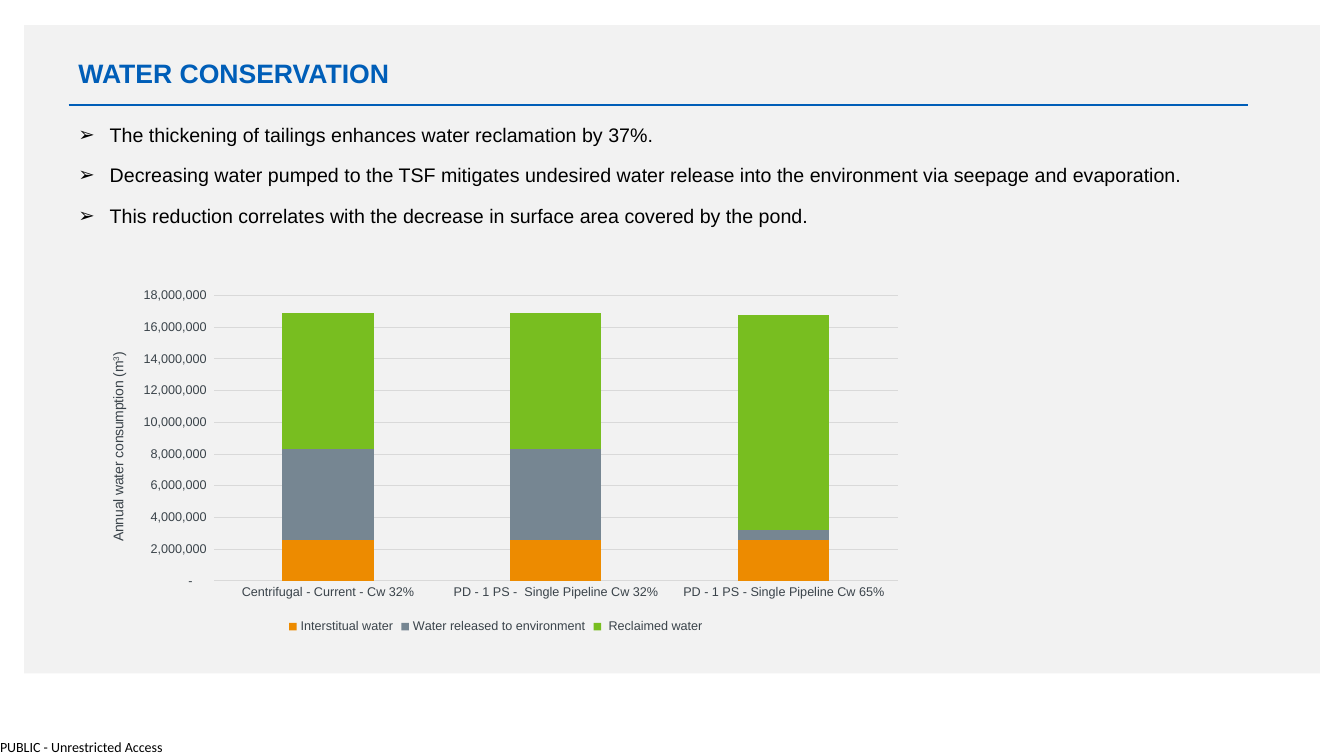
import pptx
import pptx.chart.data
import pptx.dml.color
import pptx.enum.chart
import pptx.enum.shapes
import pptx.enum.text
import pptx.oxml
import pptx.oxml.ns
import pptx.util
from lxml import etree

RGBColor = pptx.dml.color.RGBColor
Inches = pptx.util.Inches
Pt = pptx.util.Pt
qn = pptx.oxml.ns.qn

BLUE = RGBColor(0x00, 0x5E, 0xB8)
BLACK = RGBColor(0x00, 0x00, 0x00)
PANEL_GRAY = RGBColor(0xF2, 0xF2, 0xF2)
GRID_GRAY = RGBColor(0xD9, 0xD9, 0xD9)
AXIS_TEXT = RGBColor(0x3A, 0x43, 0x4A)
ORANGE = RGBColor(0xED, 0x8B, 0x00)
SLATE = RGBColor(0x76, 0x86, 0x92)
GREEN = RGBColor(0x78, 0xBE, 0x20)

BULLETS = [
    "The thickening of tailings enhances water reclamation by 37%.",
    "Decreasing water pumped to the TSF mitigates undesired water release "
    "into the environment via seepage and evaporation.",
    "This reduction correlates with the decrease in surface area covered by the pond.",
]
SCENARIOS = [
    "Centrifugal - Current - Cw 32%",
    "PD - 1 PS -  Single Pipeline Cw 32%",
    "PD - 1 PS - Single Pipeline Cw 65%",
]
WATER_SERIES = [
    ("Interstitual water", ORANGE, (2600000, 2600000, 2600000)),
    ("Water released to environment", SLATE, (5700000, 5700000, 600000)),
    (" Reclaimed water ", GREEN, (8600000, 8600000, 13600000)),
]
NUMBER_FORMAT = '_ * #,##0_ ;_ * \\-#,##0_ ;_ * "-"??_ ;_ '


def set_font(font, size, color, name="Arial", bold=False):
    font.size = Pt(size)
    font.name = name
    font.bold = bold
    font.color.rgb = color


def add_text_frame(slide, box):
    frame = slide.shapes.add_textbox(*map(Inches, box)).text_frame
    frame.word_wrap = True
    return frame


def add_panel(slide, box):
    panel = slide.shapes.add_shape(
        pptx.enum.shapes.MSO_SHAPE.RECTANGLE, *map(Inches, box))
    panel.shadow.inherit = False
    panel.fill.solid()
    panel.fill.fore_color.rgb = PANEL_GRAY
    panel.line.fill.background()


def add_heading(slide, box, rule_width, rule_gap):
    left, top, width, height = box
    frame = add_text_frame(slide, box)
    frame.vertical_anchor = pptx.enum.text.MSO_ANCHOR.MIDDLE
    paragraph = frame.paragraphs[0]
    paragraph.text = "WATER CONSERVATION"
    paragraph.line_spacing = 0.75
    set_font(paragraph.font, 19, BLUE, bold=True)

    # Rule under the heading
    rule_top = Inches(top + height + rule_gap)
    rule = slide.shapes.add_connector(
        pptx.enum.shapes.MSO_CONNECTOR.STRAIGHT,
        Inches(left), rule_top, Inches(left + rule_width), rule_top)
    rule.line.color.rgb = BLUE
    rule.line.width = Pt(1)
    etree.SubElement(rule._element.spPr, qn("a:effectLst"))


def add_bullets(slide, box):
    frame = add_text_frame(slide, box)
    for index, text in enumerate(BULLETS):
        paragraph = frame.add_paragraph() if index else frame.paragraphs[0]
        paragraph.text = text
        properties = paragraph._p.get_or_add_pPr()
        properties.set("marL", str(Inches(0.31)))
        properties.set("indent", str(-Inches(0.31)))
        etree.SubElement(properties, qn("a:buFont"), typeface="Arial")
        etree.SubElement(properties, qn("a:buChar"), char="➢")
        paragraph.space_before = Pt(6 if index else 0)
        paragraph.space_after = Pt(6)
        set_font(paragraph.font, 14, BLACK)


def make_layout(**settings):
    layout = pptx.oxml.parse_xml(
        f'<c:layout xmlns:c="{pptx.oxml.ns.nsuri("c")}"><c:manualLayout/></c:layout>')
    for name, value in settings.items():
        etree.SubElement(layout[0], qn(f"c:{name}"), val=str(value))
    return layout


def replace_layout(parent, layout, position):
    for existing in parent.findall(qn("c:layout")):
        parent.remove(existing)
    parent.insert(position, layout)


def style_axes(chart):
    no_tick = pptx.enum.chart.XL_TICK_MARK.NONE
    for axis in (chart.category_axis, chart.value_axis):
        axis.major_tick_mark = no_tick
        axis.minor_tick_mark = no_tick
        set_font(axis.tick_labels.font, 9, AXIS_TEXT)
    chart.category_axis.format.line.color.rgb = GRID_GRAY
    chart.category_axis.format.line.width = Pt(0.75)

    value_axis = chart.value_axis
    value_axis.minimum_scale = 0
    value_axis.maximum_scale = 18000000
    value_axis.major_unit = 2000000
    value_axis.format.line.fill.background()
    value_axis.major_gridlines.format.line.color.rgb = GRID_GRAY
    value_axis.major_gridlines.format.line.width = Pt(0.75)
    value_axis.tick_labels.number_format = NUMBER_FORMAT
    value_axis.tick_labels.number_format_is_linked = False

    # Axis title with a raised exponent
    title = value_axis.axis_title
    paragraph = title.text_frame.paragraphs[0]
    set_font(paragraph.font, 10, AXIS_TEXT)
    for text in ("Annual water consumption (m", "3", ")"):
        run = paragraph.add_run()
        run.text = text
        set_font(run.font, 10, AXIS_TEXT)
        if text == "3":
            run.font._element.set("baseline", "30000")
    replace_layout(title._element, make_layout(
        xMode="edge", yMode="edge", x=0.03, y=0.19), 1)


def add_water_chart(slide, box):
    data = pptx.chart.data.CategoryChartData(number_format=NUMBER_FORMAT)
    data.categories = SCENARIOS
    for name, _, values in WATER_SERIES:
        data.add_series(name, values)
    chart = slide.shapes.add_chart(
        pptx.enum.chart.XL_CHART_TYPE.COLUMN_STACKED, *map(Inches, box), data).chart
    chart.has_title = False
    set_font(chart.font, 10, AXIS_TEXT)

    plot = chart.plots[0]
    plot.gap_width = 150
    plot.overlap = 100
    plot.vary_by_categories = False
    for series, (_, color, _) in zip(plot.series, WATER_SERIES):
        series.format.fill.solid()
        series.format.fill.fore_color.rgb = color
        series.invert_if_negative = False
    style_axes(chart)

    chart.has_legend = True
    chart.legend.position = pptx.enum.chart.XL_LEGEND_POSITION.BOTTOM
    chart.legend.include_in_layout = False
    set_font(chart.legend.font, 9, AXIS_TEXT)

    plot_area = chart._chartSpace.find(f".//{qn('c:plotArea')}")
    replace_layout(plot_area, make_layout(
        layoutTarget="inner", xMode="edge", yMode="edge",
        x=0.16, y=0.04, w=0.82, h=0.8), 0)


def add_classification(slide, box):
    frame = add_text_frame(slide, box)
    frame.margin_left = frame.margin_right = 0
    frame.margin_top = frame.margin_bottom = 0
    paragraph = frame.paragraphs[0]
    paragraph.text = "PUBLIC - Unrestricted Access"
    set_font(paragraph.font, 10, BLACK, name="Calibri")


def main():
    presentation = pptx.Presentation()
    presentation.slide_width = Inches(13.33)
    presentation.slide_height = Inches(7.5)
    slide = presentation.slides.add_slide(presentation.slide_layouts[6])

    add_classification(slide, (0, 7.33, 1.65, 0.17))
    add_panel(slide, (0.24, 0.25, 12.85, 6.43))
    add_heading(slide, (0.68, 0.56, 9.84, 0.4), rule_width=11.7, rule_gap=0.08)
    add_bullets(slide, (0.68, 1.17, 11.75, 1.14))
    add_water_chart(slide, (0.8, 2.79, 8.27, 3.54))
    presentation.save("out.pptx")


if __name__ == "__main__":
    main()
